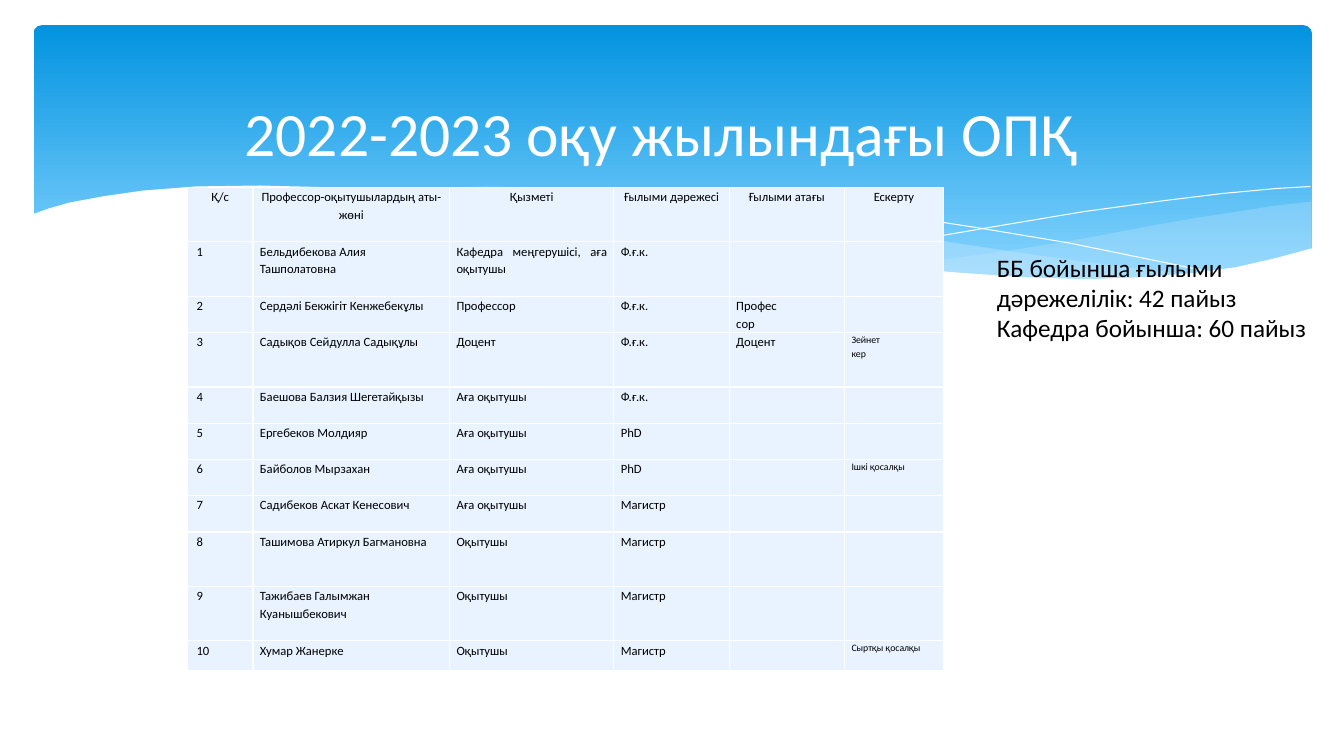
"""Build a slide with a staff table on a blue wave background."""
from lxml import etree
from pptx import Presentation
from pptx.dml.color import RGBColor
from pptx.enum.shapes import MSO_SHAPE
from pptx.enum.text import MSO_ANCHOR, PP_ALIGN
from pptx.oxml.ns import qn
from pptx.util import Pt

ROUNDED = MSO_SHAPE.ROUNDED_RECTANGLE
LEFT, CENTER, JUSTIFY = PP_ALIGN.LEFT, PP_ALIGN.CENTER, PP_ALIGN.JUSTIFY
TOP, MIDDLE = MSO_ANCHOR.TOP, MSO_ANCHOR.MIDDLE
FONT = "Calibri"
COLORS = {"sky": "0293E0", "pale_sky": "83D3FE", "wave": "C6E7FC",
          "white": "FFFFFF", "cell": "E8F3FF", "black": "000000"}

RIGHT_WAVE = [
    (936.7, 144), (910.8, 146.9), (883.4, 151.2), (855.4, 155.5), (825.8, 160.6),
    (772.6, 170.6), (723.6, 178.6), (677.5, 185), (635, 190.8), (663.1, 193.7),
    (689.8, 195.8), (726.5, 198.7), (771.1, 200.2), (810.7, 199.4), (845.3, 196.6),
    (877, 192.2), (905, 186.5), (936.7, 177.8)]
MIDDLE_WAVE = [
    (856.8, 196.6), (803.5, 190.8), (744.5, 182.9), (677.5, 172.8), (604.1, 159.8),
    (560.2, 151.9), (519.1, 146.2), (469.4, 139.7), (424.1, 136.1), (383, 133.9),
    (347, 133.2), (314.6, 134.6), (275, 137.5), (328.3, 143.3), (388.1, 151.9),
    (431.3, 159.8), (508.3, 172.8), (577.4, 183.6), (638.6, 191.5), (693.4, 197.3),
    (741.6, 199.4), (784.8, 200.2), (823, 199.4)]
FALLING_CURVE = [
    (296.6, 140.4), (329.8, 136.8), (371.5, 134.6), (415.4, 134.6), (469.4, 136.8),
    (534.2, 141.8), (583.9, 146.9), (637.9, 153.4), (698.4, 162.7), (763.2, 173.5),
    (833.8, 187.9), (871.2, 195.8)]
RISING_CURVE = [
    (589, 185), (626.4, 177.1), (667.4, 169.2), (717.8, 160.6), (774, 151.2),
    (831.6, 143.3), (873.4, 138.2), (912.2, 134.6), (936, 133.2)]
WHITE_WAVE = [
    (938.2, 177.1), (911.5, 184.3), (883.4, 190.8), (851.8, 195.1), (816.5, 198),
    (776.2, 199.4), (730.8, 198), (679.7, 194.4), (621.4, 188.6), (555.8, 180),
    (483.1, 167.8), (429.1, 158.4), (375.1, 149), (326.2, 141.8), (280.8, 136.8),
    (239.8, 133.9), (185.8, 132.5), (139.7, 133.2), (102.2, 136.1), (72.7, 140.4),
    (49.7, 144.7), (34.6, 149), (22.3, 153.4), (22.3, 236.9), (938.2, 236.9)]

COLUMN_WIDTHS = [46.8, 140.4, 117.4, 82.4, 82.4, 70.6]
TALL, SHORT, LAST = 38.88, 25.92, 20.9
ROW_HEIGHTS = [TALL, TALL, SHORT, TALL] + [SHORT] * 4 + [TALL, TALL, LAST]
COLUMN_ALIGNS = [JUSTIFY, LEFT, JUSTIFY, LEFT, LEFT, LEFT]
STAFF = [
    ["Қ/с", "Профессор-оқытушылардың аты-жөні", "Қызметі", "Ғылыми дәрежесі",
     "Ғылыми атағы", "Ескерту"],
    ["1", "Бельдибекова Алия Ташполатовна", "Кафедра меңгерушісі, аға оқытушы",
     "Ф.ғ.к.", "", ""],
    ["2", "Сердәлі Бекжігіт Кенжебекұлы", "Профессор", "Ф.ғ.к.", "Профес\nсор", ""],
    ["3", "Садықов Сейдулла Садықұлы", "Доцент", "Ф.ғ.к.", "Доцент", "Зейнет\nкер"],
    ["4", "Баешова Балзия Шегетайқызы", "Аға оқытушы", "Ф.ғ.к.", "", ""],
    ["5", "Ергебеков Молдияр", "Аға оқытушы", "PhD", "", ""],
    ["6", "Байболов Мырзахан", "Аға оқытушы", "PhD", "", "Ішкі қосалқы"],
    ["7", "Садибеков Аскат Кенесович", "Аға оқытушы", "Магистр", "", ""],
    ["8", "Ташимова Атиркул Багмановна", "Оқытушы", "Магистр", "", ""],
    ["9", "Тажибаев Галымжан Куанышбекович", "Оқытушы", "Магистр", "", ""],
    ["10", "Хумар Жанерке", "Оқытушы", "Магистр", "", "Сыртқы қосалқы"],
]


def rgb(name):
    return RGBColor.from_string(COLORS[name])


def format_text(tf, size, color, align, spacing=None):
    for p in tf.paragraphs:
        p.alignment = align
        p.line_spacing = spacing
        for r in p.runs:
            r.font.size = Pt(size)
            r.font.name = FONT
            r.font.color.rgb = rgb(color)
        if not p.runs:
            etree.SubElement(p._p, qn("a:endParaRPr"), sz=str(size * 100))


def add_text(slide, text, left, top, width, height, size, color, align, anchor):
    tf = slide.shapes.add_textbox(Pt(left), Pt(top), Pt(width), Pt(height)).text_frame
    tf.word_wrap = True
    tf.vertical_anchor = anchor
    tf.text = text
    format_text(tf, size, color, align)


def add_sky(slide):
    sp = slide.shapes.add_shape(ROUNDED, Pt(24), Pt(18), Pt(913), Pt(194.4))
    sp.adjustments[0] = 0.03
    sp.shadow.inherit = False
    sp.line.fill.background()
    sp.fill.gradient()
    sp.fill.gradient_angle = 270
    stops = zip(sp.fill.gradient_stops, ("sky", "pale_sky"), (0, 0.9))
    for stop, color, position in stops:
        stop.color.rgb = rgb(color)
        stop.position = position


def add_outline(slide, points, closed):
    corners = [(Pt(x), Pt(y)) for x, y in points]
    builder = slide.shapes.build_freeform(*corners[0])
    builder.add_line_segments(corners[1:], close=closed)
    sp = builder.convert_to_shape()
    sp.shadow.inherit = False
    return sp


def add_wave(slide, points, color, opacity=100):
    sp = add_outline(slide, points, True)
    sp.line.fill.background()
    sp.fill.solid()
    sp.fill.fore_color.rgb = rgb(color)
    if opacity < 100:
        clr = sp._element.spPr.find(qn("a:solidFill")).find(qn("a:srgbClr"))
        etree.SubElement(clr, qn("a:alpha"), val=str(opacity * 1000))


def add_curve(slide, points):
    sp = add_outline(slide, points, False)
    sp.fill.background()
    sp.line.color.rgb = rgb("white")
    sp.line.width = Pt(0)


def add_borders(cell):
    tc_pr = cell._tc.get_or_add_tcPr()
    for i, side in enumerate(("a:lnL", "a:lnR", "a:lnT", "a:lnB")):
        ln = etree.Element(qn(side), w=str(Pt(1)))
        fill = etree.SubElement(ln, qn("a:solidFill"))
        etree.SubElement(fill, qn("a:srgbClr"), val=COLORS["white"])
        tc_pr.insert(i, ln)


def fill_cell(cell, text, size, align, left_margin):
    cell.margin_left, cell.margin_right = Pt(left_margin), Pt(5)
    cell.margin_top = cell.margin_bottom = Pt(0)
    cell.fill.solid()
    cell.fill.fore_color.rgb = rgb("cell")
    add_borders(cell)
    cell.text_frame.text = text
    format_text(cell.text_frame, size, "black", align, 1.15)


def add_staff_table(slide):
    frame = slide.shapes.add_table(len(STAFF), len(COLUMN_WIDTHS), Pt(133.9), Pt(133.9),
                                   Pt(sum(COLUMN_WIDTHS)), Pt(sum(ROW_HEIGHTS)))
    table = frame.table
    table.first_row = table.horz_banding = False
    for column, width in zip(table.columns, COLUMN_WIDTHS):
        column.width = Pt(width)
    for row, height in zip(table.rows, ROW_HEIGHTS):
        row.height = Pt(height)
    for i, texts in enumerate(STAFF):
        for j, text in enumerate(texts):
            size = 7 if i and j == 5 else 9
            align = COLUMN_ALIGNS[j] if i else CENTER
            fill_cell(table.cell(i, j), text, size, align, 6.5 if i and j == 0 else 5)


def main():
    prs = Presentation()
    prs.slide_width, prs.slide_height = Pt(960), Pt(540)
    slide = prs.slides.add_slide(prs.slide_layouts[6])
    add_sky(slide)
    add_wave(slide, RIGHT_WAVE, "wave", 29)
    add_wave(slide, MIDDLE_WAVE, "wave", 40)
    add_curve(slide, FALLING_CURVE)
    add_curve(slide, RISING_CURVE)
    add_wave(slide, WHITE_WAVE, "white")
    add_staff_table(slide)
    add_text(slide, "2022-2023 оқу жылындағы ОПҚ", 58.3, 41.8, 828, 104.4,
             44, "white", CENTER, MIDDLE)
    add_text(slide, "ББ бойынша ғылыми дәрежелілік: 42 пайыз\nКафедра бойынша: 60 пайыз",
             704.9, 176.4, 239, 72.7, 18, "black", LEFT, TOP)
    prs.save("out.pptx")


if __name__ == "__main__":
    main()
